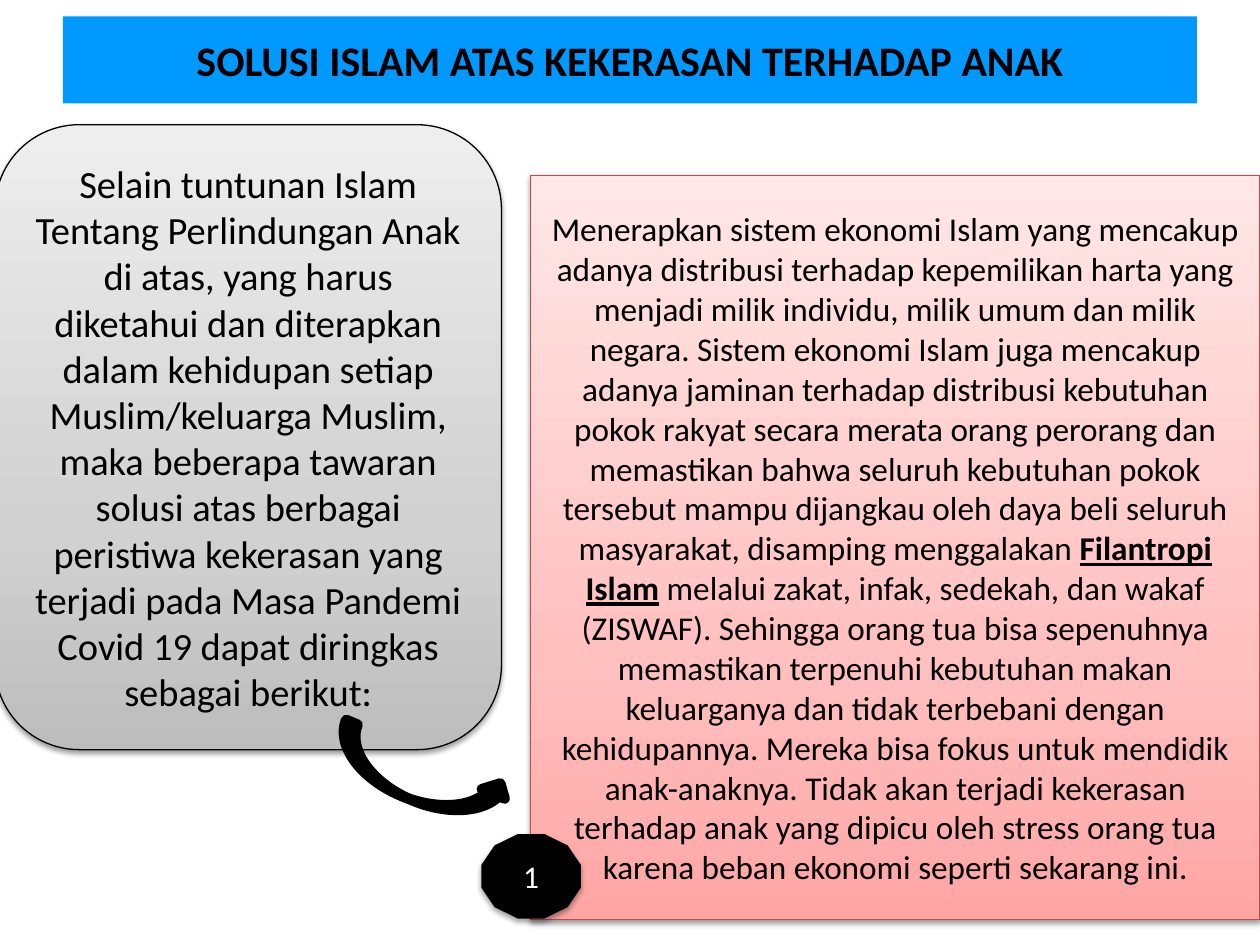
from copy import deepcopy

from lxml.etree import SubElement
from pptx import Presentation
from pptx.dml.color import RGBColor as RGB
from pptx.enum.shapes import MSO_SHAPE as SHAPE
from pptx.enum.text import MSO_ANCHOR as ANCHOR, PP_ALIGN as ALIGN
from pptx.oxml.ns import qn
from pptx.util import Inches, Pt

COLORS = {
    "black": "000000", "white": "FFFFFF", "title": "0099FF", "red line": "BF4C48",
}
GREYS = ("BDBDBD", "D1D1D1", "EEEEEE")
PINKS = ("FFA6A5", "FFC0BF", "FFE7E7")
STOPS = (0, 0.35, 1)


class Deck:
    """Style and current slide; lengths are cells of a 100 by 75 grid."""

    font = "Calibri"
    cell = Inches(0.1)

    def __init__(self):
        self.prs = Presentation()
        self.prs.slide_width, self.prs.slide_height = 100 * self.cell, 75 * self.cell
        self.slide = self.prs.slides.add_slide(self.prs.slide_layouts[6])

    def shape(self, kind, col, row, cols, rows, fill, line=None, weight=0.75):
        box = [round(n * self.cell) for n in (col, row, cols, rows)]
        sp = self.slide.shapes.add_shape(kind, *box)
        sp.shadow.inherit = False
        if isinstance(fill, tuple):
            self.gradient(sp, fill)
        else:
            sp.fill.solid()
            sp.fill.fore_color.rgb = RGB.from_string(COLORS[fill])
        if line:
            sp.line.color.rgb = RGB.from_string(COLORS[line])
            sp.line.width = Pt(weight)
        else:
            sp.line.fill.background()
        return sp

    def gradient(self, sp, colors):
        """Fade from the first colour at the bottom to the last at the top."""
        sp.fill.gradient()
        sp.fill.gradient_angle = 90
        stops = next(sp.element.spPr.iter(qn("a:gsLst")))
        stops.append(deepcopy(stops[0]))
        for stop, color, at in zip(sp.fill.gradient_stops, colors, STOPS):
            stop.color.rgb = RGB.from_string(color)
            stop.position = at

    def shadow(self, sp, alpha, distance):
        effects = sp.element.spPr.find(qn("a:effectLst"))
        outer = SubElement(effects, qn("a:outerShdw"), blurRad=str(Pt(3.1)),
                           dist=str(Pt(distance)), dir="5400000", rotWithShape="0")
        color = SubElement(outer, qn("a:srgbClr"), val=COLORS["black"])
        SubElement(color, qn("a:alpha"), val=str(alpha * 1000))

    def text(self, sp, runs, size, color="black", bold=False):
        """Write centred runs; those in a tuple are emphasised as (text, underlined)."""
        tf = sp.text_frame
        tf.word_wrap = True
        tf.vertical_anchor = ANCHOR.MIDDLE
        p = tf.paragraphs[0]
        p.alignment = ALIGN.CENTER
        p.font.name, p.font.size, p.font.bold = self.font, Pt(size), bold
        p.font.color.rgb = RGB.from_string(COLORS[color])
        for run in runs:
            r = p.add_run()
            if isinstance(run, tuple):
                r.text, r.font.underline = run
                r.font.bold = True
            else:
                r.text = run


def main():
    deck = Deck()

    # Title bar
    title = deck.shape(SHAPE.RECTANGLE, 5, 1.3, 90, 6.9, "title")
    deck.text(title, ["SOLUSI ISLAM ATAS KEKERASAN TERHADAP ANAK"], 24, bold=True)

    # Introduction
    intro = deck.shape(SHAPE.ROUNDED_RECTANGLE, -0.4, 9.9, 40.2, 49.6, GREYS, "black")
    deck.shadow(intro, 38, 1.6)
    deck.text(intro, [
        "Selain tuntunan Islam Tentang Perlindungan Anak di atas, yang harus diketahui "
        "dan diterapkan dalam kehidupan setiap Muslim/keluarga Muslim, maka beberapa "
        "tawaran solusi atas berbagai peristiwa kekerasan yang terjadi pada Masa "
        "Pandemi Covid 19 dapat diringkas sebagai berikut:"], 22)

    # Solution
    solution = deck.shape(SHAPE.RECTANGLE, 42.1, 13.9, 57.9, 59.1, PINKS, "red line")
    deck.shadow(solution, 38, 1.6)
    deck.text(solution, [
        "Menerapkan sistem ekonomi Islam yang mencakup adanya distribusi terhadap "
        "kepemilikan harta yang menjadi milik individu, milik umum dan milik negara. "
        "Sistem ekonomi Islam juga mencakup adanya jaminan terhadap distribusi "
        "kebutuhan pokok rakyat secara merata orang perorang dan memastikan bahwa "
        "seluruh kebutuhan pokok tersebut mampu dijangkau oleh daya beli seluruh "
        "masyarakat, disamping menggalakan ",
        ("Filantropi", True), (" ", False), ("Islam", True),
        " melalui zakat, infak, sedekah, dan wakaf (ZISWAF). Sehingga orang tua bisa "
        "sepenuhnya memastikan terpenuhi kebutuhan makan keluarganya dan tidak "
        "terbebani dengan kehidupannya. Mereka bisa fokus untuk mendidik "
        "anak-anaknya. Tidak akan terjadi kekerasan terhadap anak yang dipicu oleh "
        "stress orang tua karena beban ekonomi seperti sekarang ini."], 19)

    # Arrow from the introduction to the solution
    arrow = deck.shape(SHAPE.CURVED_UP_ARROW, 26.2, 59.7, 14.2, 3.9, "black", "black", 6)
    arrow.rotation = 22.4

    # Number badge
    badge = deck.shape(SHAPE.DODECAGON, 38.2, 66.2, 7.9, 6.7, "black")
    deck.shadow(badge, 35, 1.8)
    deck.text(badge, ["1"], 18, "white")

    deck.prs.save("out.pptx")


if __name__ == "__main__":
    main()
